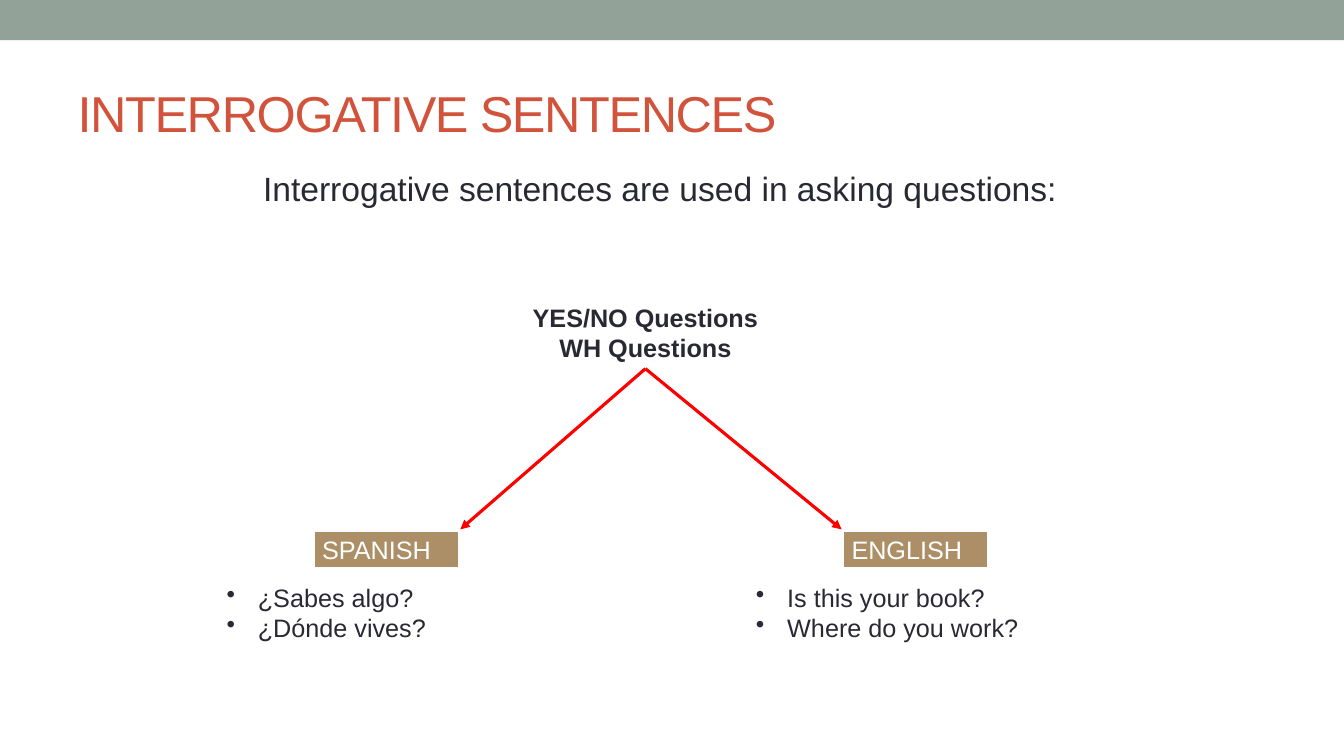
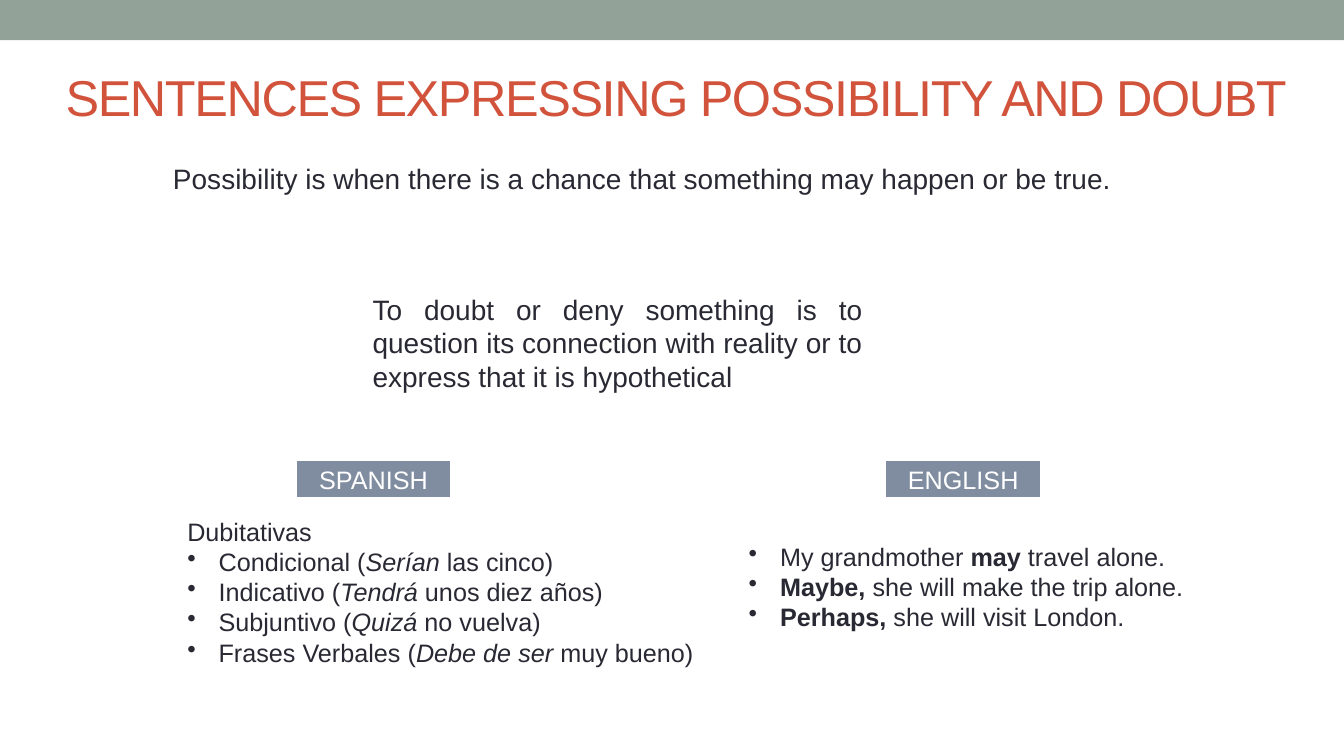
from dataclasses import dataclass

from lxml import etree
from pptx import Presentation
from pptx import util as u
from pptx.dml.color import RGBColor
from pptx.enum import shapes, text
from pptx.oxml.ns import qn

Cm, Pt = u.Cm, u.Pt
LEFT, CENTER, JUSTIFY = (text.PP_ALIGN.LEFT, text.PP_ALIGN.CENTER,
                         text.PP_ALIGN.JUSTIFY)


@dataclass(frozen=True)
class Theme:
    """Colours, font and type sizes of the deck."""
    font: str = "Arial"
    band: str = "93A299"
    title: str = "D2533C"
    ink: str = "292934"
    paper: str = "FFFFFF"
    arrow: str = "FF0000"
    tan: str = "AD8F67"
    slate: str = "808DA0"
    title_size: int = 36
    lead_size: int = 24
    definition_size: int = 20
    body_size: int = 18


THEME = Theme()


class Deck:
    def __init__(self, theme):
        self.theme = theme
        self.prs = Presentation()
        self.prs.slide_width, self.prs.slide_height = Cm(33.87), Cm(19.05)
        self.slide = None

    def add_slide(self, title, left, top, width, align=LEFT):
        """Start a slide with the top band and its title."""
        self.slide = self.prs.slides.add_slide(self.prs.slide_layouts[5])
        self.rectangle(0, 0, self.prs.slide_width, Cm(1.01), self.theme.band)
        heading = self.slide.shapes.title
        heading.left, heading.top = Cm(left), Cm(top)
        heading.width, heading.height = Cm(width), Cm(2.74)
        frame = heading.text_frame
        frame.auto_size = text.MSO_AUTO_SIZE.NONE
        frame.vertical_anchor = text.MSO_ANCHOR.MIDDLE
        self.set_text(frame, [title], self.theme.title_size, self.theme.title, align)
        # Tighter letter spacing, in hundredths of a point
        frame.paragraphs[0].runs[0]._r.get_or_add_rPr().set("spc", "-100")

    def rectangle(self, left, top, width, height, color):
        box = self.slide.shapes.add_shape(
            shapes.MSO_SHAPE.RECTANGLE, left, top, width, height)
        box.shadow.inherit = False
        box.fill.solid()
        box.fill.fore_color.rgb = RGBColor.from_string(color)
        box.line.fill.background()
        return box

    def set_text(self, frame, lines, size, color, align=LEFT, bold=None,
                 emphasis=None):
        """Fill a frame; text between bars gets the emphasis (bold or italic)."""
        frame.word_wrap = True
        for index, line in enumerate(lines):
            paragraph = frame.add_paragraph() if index else frame.paragraphs[0]
            paragraph.alignment = align
            font = paragraph.font
            font.name, font.size, font.bold = self.theme.font, Pt(size), bold
            font.color.rgb = RGBColor.from_string(color)
            for part, words in enumerate(line.split("|")):
                if words:
                    run = paragraph.add_run()
                    run.text = words
                    if part % 2:
                        run.font.bold = True if emphasis == "bold" else None
                        run.font.italic = True if emphasis == "italic" else None

    def text_box(self, lines, left, top, width, height, size, **style):
        box = self.slide.shapes.add_textbox(
            Cm(left), Cm(top), Cm(width), Cm(height))
        self.set_text(box.text_frame, lines, size, self.theme.ink, **style)
        return box

    def bullets(self, lines, left, top, width, height, heading=None, emphasis=None):
        """List of examples, with an optional plain first line."""
        lead = [heading] if heading else []
        box = self.text_box(lead + lines, left, top, width, height,
                            self.theme.body_size, emphasis=emphasis)
        for paragraph in box.text_frame.paragraphs[len(lead):]:
            properties = paragraph._p.get_or_add_pPr()
            properties.set("marL", str(Cm(0.79)))
            properties.set("indent", str(-Cm(0.79)))
            bullet = etree.Element(qn("a:buChar"), char="•")
            properties.insert(0, bullet)

    def language_labels(self, left, top, width, gap, color, align=LEFT):
        """Heading boxes of the two language columns."""
        labels = []
        for column, language in enumerate(["SPANISH", "ENGLISH"]):
            label = self.rectangle(Cm(left + column * gap), Cm(top),
                                   Cm(width), Cm(1.02), color)
            label.line.color.rgb = RGBColor.from_string(self.theme.paper)
            label.line.width = Pt(3.5)
            self.set_text(label.text_frame, [language], self.theme.body_size,
                          self.theme.paper, align)
            labels.append(label)
        return labels

    def arrow(self, source, x, y):
        """Arrow from the bottom of a box to a point."""
        connector = self.slide.shapes.add_connector(
            shapes.MSO_CONNECTOR.STRAIGHT, source.left, source.top, x, y)
        connector.begin_connect(source, 2)
        connector.line.color.rgb = RGBColor.from_string(self.theme.arrow)
        connector.line.width = Pt(2.25)
        properties = connector._element.spPr
        etree.SubElement(properties.find(qn("a:ln")), qn("a:tailEnd"),
                         type="triangle")
        etree.SubElement(properties, qn("a:effectLst"))


def interrogative(deck):
    theme = deck.theme
    deck.add_slide("INTERROGATIVE SENTENCES", 1.7, 1.47, 30.48)
    deck.text_box(["Interrogative sentences are used in asking questions:"],
                  6.38, 4.11, 20.73, 2.39, theme.lead_size, align=JUSTIFY)
    question_types = deck.text_box(
        ["YES/NO Questions", "WH Questions"], 12.67, 7.49, 7.19, 1.8,
        theme.body_size, align=CENTER, bold=True)

    # Language columns
    gap = 13.34
    deck.bullets(["¿Sabes algo?", "¿Dónde vives?"], 5.46, 14.55, 7.47, 1.8)
    deck.bullets(["Is this your book?", "Where do you work?"],
                 5.46 + gap, 14.55, 9.6, 1.8)
    spanish, english = deck.language_labels(7.87, 13.34, 3.73, gap, theme.tan)

    # Arrows to the inner corners of the labels
    deck.arrow(question_types, spanish.left + spanish.width, spanish.top)
    deck.arrow(question_types, english.left, english.top)


def possibility_and_doubt(deck):
    theme = deck.theme
    deck.add_slide("SENTENCES EXPRESSING POSSIBILITY AND DOUBT",
                   0.25, 1.07, 33.6, CENTER)

    # Definitions
    deck.text_box(["Possibility is when there is a chance that something may "
                   "happen or be true."],
                  4.11, 3.94, 24.33, 2.49, theme.definition_size, align=JUSTIFY)
    deck.text_box(["To doubt or deny something is to question its connection "
                   "with reality or to express that it is hypothetical"],
                  9.14, 7.24, 12.85, 3.23, theme.definition_size, align=JUSTIFY)

    # Language columns
    deck.bullets(["My grandmother |may| travel alone.",
                  "|Maybe,| she will make the trip alone.",
                  "|Perhaps,| she will visit London."],
                 18.62, 13.51, 12.4, 2.57, emphasis="bold")
    deck.bullets(["Condicional (|Serían |las cinco)",
                  "Indicativo (|Tendrá| unos diez años)",
                  "Subjuntivo (|Quizá| no vuelva)",
                  "Frases Verbales (|Debe de ser |muy bueno)"],
                 4.47, 12.88, 13.79, 4.11, heading="Dubitativas", emphasis="italic")
    deck.language_labels(7.42, 11.56, 3.99, 14.86, theme.slate, CENTER)


def main():
    deck = Deck(THEME)
    interrogative(deck)
    possibility_and_doubt(deck)
    deck.prs.save("out.pptx")


if __name__ == "__main__":
    main()
